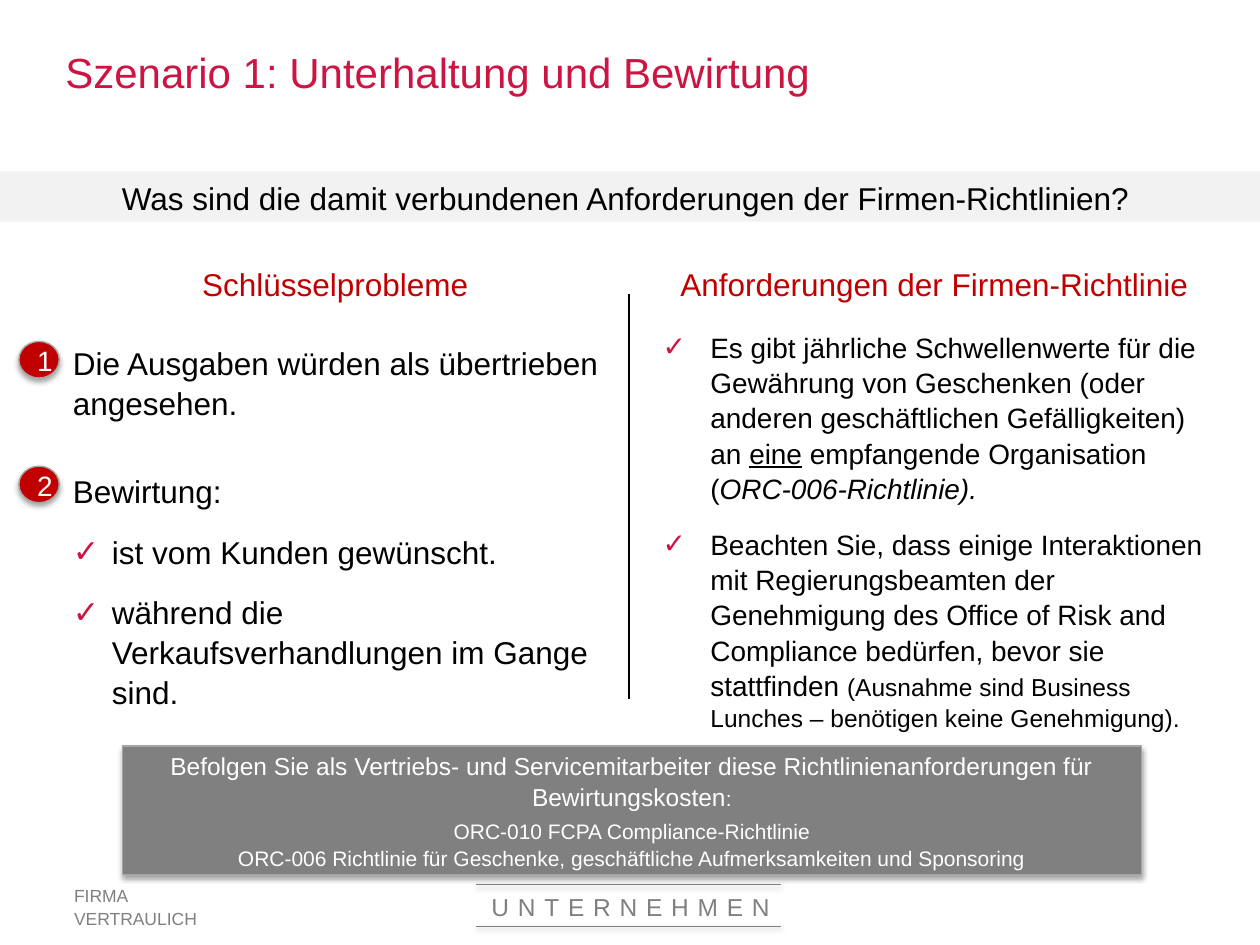
from lxml.etree import SubElement
from pptx import Presentation
from pptx.dml.color import RGBColor
from pptx.enum.shapes import MSO_CONNECTOR as CONNECTOR, MSO_SHAPE as SHAPE
from pptx.enum.text import MSO_ANCHOR as ANCHOR, PP_ALIGN as ALIGN
from pptx.oxml.ns import qn
from pptx.util import Inches, Pt

BLACK = RGBColor(0x00, 0x00, 0x00)
WHITE = RGBColor(0xFF, 0xFF, 0xFF)
GRAY = RGBColor(0x80, 0x80, 0x80)
BORDER = RGBColor(0xA5, 0xA5, 0xA5)
BAND = RGBColor(0xF2, 0xF2, 0xF2)
RED = RGBColor(0xC0, 0x00, 0x00)
CRIMSON = RGBColor(0xCC, 0x15, 0x43)

presentation = Presentation()
presentation.slide_width = Inches(10)
presentation.slide_height = Inches(7.5)
slide = presentation.slides.add_slide(presentation.slide_layouts[6])
shapes = slide.shapes
COLUMN = presentation.slide_width // 100
ROW = presentation.slide_height // 100


def write(shape, paragraphs, color, align=ALIGN.LEFT, anchor=ANCHOR.TOP):
    frame = shape.text_frame
    frame.word_wrap = True
    frame.vertical_anchor = anchor
    for index, (runs, before, after, indent) in enumerate(paragraphs):
        paragraph = frame.paragraphs[0] if index == 0 else frame.add_paragraph()
        if indent:
            properties = paragraph._p.get_or_add_pPr()
            properties.set("marL", str(Inches(indent)))
            properties.set("indent", str(-Inches(indent)))
            bullet_color = SubElement(properties, qn("a:buClr"))
            SubElement(bullet_color, qn("a:srgbClr"), val=str(CRIMSON))
            SubElement(properties, qn("a:buFont"), typeface="Arial")
            SubElement(properties, qn("a:buChar"), char="✓")
        paragraph.alignment = align
        paragraph.line_spacing = 1.05
        paragraph.space_before = Pt(before)
        paragraph.space_after = Pt(after)
        for text, size, style in runs:
            run = paragraph.add_run()
            run.text = text
            run.font.name = "Arial"
            run.font.size = Pt(size)
            run.font.color.rgb = color
            if style == "underline":
                run.font.underline = True
            if style == "italic":
                run.font.italic = True
            if style == "spaced":
                run._r.get_or_add_rPr().set("spc", "500")


def add_shadow(effects, distance, opacity):
    shadow = SubElement(effects, qn("a:outerShdw"), blurRad=str(Pt(3.1)),
                        dist=str(Pt(distance)), dir="5400000", rotWithShape="0")
    shade = SubElement(shadow, qn("a:srgbClr"), val=str(BLACK))
    SubElement(shade, qn("a:alpha"), val=str(opacity * 1000))


issues = [
    ([("Die Ausgaben würden als übertrieben angesehen.", 18, "")], 0, 21.5, 0),
    ([("Bewirtung:", 18, "")], 6, 6, 0),
    ([("ist vom Kunden gewünscht.", 18, "")], 6, 6, 0.31),
    ([("während die Verkaufsverhandlungen im Gange sind.", 18, "")], 6, 6, 0.31),
]
requirements = [
    ([("Es gibt jährliche Schwellenwerte für die Gewährung von Geschenken (oder anderen "
       "geschäftlichen Gefälligkeiten) an ", 16, ""),
      ("eine", 16, "underline"),
      (" empfangende Organisation (", 16, ""),
      ("ORC-006-Richtlinie).", 16, "italic")], 0, 6, 0.38),
    ([("Beachten Sie, dass einige Interaktionen mit Regierungsbeamten der Genehmigung des "
       "Office of Risk and Compliance bedürfen, bevor sie stattfinden ", 16, ""),
      ("(Ausnahme sind Business Lunches – benötigen keine Genehmigung).", 14, "")], 6, 6, 0.38),
]
policies = [
    ([("Befolgen Sie als Vertriebs- und Servicemitarbeiter diese Richtlinienanforderungen "
       "für Bewirtungskosten", 14, ""), (":", 12, "")], 0, 3.5, 0),
    ([("ORC-010 FCPA Compliance-Richtlinie", 12, "")], 0, 0, 0),
    ([("ORC-006 Richtlinie für Geschenke, geschäftliche Aufmerksamkeiten und Sponsoring",
       12, "")], 0, 0, 0),
]
confidential = [([("FIRMA VERTRAULICH", 10, "")], 0, 0, 0)]
audience = [([("UNTERNEHMEN", 14, "spaced")], 0, 0, 0)]
title = [([("Szenario 1: Unterhaltung und Bewirtung", 24, "")], 0, 0, 0)]
question = [([("Was sind die damit verbundenen Anforderungen der Firmen-Richtlinien? ", 18, "")],
             0, 0, 0)]
issues_heading = [([("Schlüsselprobleme", 18, "")], 0, 0, 0)]
requirements_heading = [([("Anforderungen der Firmen-Richtlinie", 18, "")], 0, 0, 0)]

for left, top, width, height, paragraphs, color, align, anchor in [
    (4.9, 94.13, 16.3, 3.6, confidential, GRAY, ALIGN.LEFT, ANCHOR.MIDDLE),
    (36.3, 93.6, 27.5, 5.6, audience, GRAY, ALIGN.CENTER, ANCHOR.TOP),
    (4.8, 35.6, 45.1, 34.53, issues, BLACK, ALIGN.LEFT, ANCHOR.TOP),
    (4.2, 1.07, 74.5, 12.67, title, CRIMSON, ALIGN.LEFT, ANCHOR.MIDDLE),
    (51.6, 34.13, 46.5, 42.4, requirements, BLACK, ALIGN.LEFT, ANCHOR.TOP),
    (4.7, 27.2, 43.8, 5.33, issues_heading, RED, ALIGN.CENTER, ANCHOR.TOP),
    (50.2, 27.2, 47.9, 5.33, requirements_heading, RED, ALIGN.CENTER, ANCHOR.TOP),
]:
    box = shapes.add_textbox(int(left * COLUMN), int(top * ROW),
                             int(width * COLUMN), int(height * ROW))
    write(box, paragraphs, color, align, anchor)

for kind, left, top, width, height, fill, border, paragraphs, color, anchor in [
    (SHAPE.RECTANGLE, 0, 18.13, 100, 5.33, BAND, None, question, BLACK, ANCHOR.TOP),
    (SHAPE.OVAL, 1.5, 36.13, 3.2, 3.87, RED, BORDER,
     [([("1", 16, "")], 0, 0, 0)], WHITE, ANCHOR.MIDDLE),
    (SHAPE.OVAL, 1.5, 49.33, 3.2, 3.87, RED, BORDER,
     [([("2", 16, "")], 0, 0, 0)], WHITE, ANCHOR.MIDDLE),
    (SHAPE.RECTANGLE, 9.7, 78.93, 80.9, 13.6, GRAY, BORDER, policies, WHITE, ANCHOR.MIDDLE),
]:
    shape = shapes.add_shape(kind, int(left * COLUMN), int(top * ROW),
                             int(width * COLUMN), int(height * ROW))
    shape.fill.solid()
    shape.fill.fore_color.rgb = fill
    shape.shadow.inherit = False
    if border:
        shape.line.color.rgb = border
        shape.line.width = Pt(0.75)
        add_shadow(shape._element.spPr.find(qn("a:effectLst")), 1.8, 35)
    else:
        shape.line.fill.background()
    write(shape, paragraphs, color, ALIGN.CENTER, anchor)

for x1, y1, x2, y2, color, weight, shaded in [
    (37.8, 93.6, 62, 93.6, GRAY, 0.5, True),
    (37.8, 98, 62, 98, GRAY, 0.5, True),
    (49.9, 31.07, 49.9, 74, BLACK, 1, False),
]:
    line = shapes.add_connector(CONNECTOR.STRAIGHT, int(x1 * COLUMN), int(y1 * ROW),
                                int(x2 * COLUMN), int(y2 * ROW))
    line.line.color.rgb = color
    line.line.width = Pt(weight)
    effects = SubElement(line._element.spPr, qn("a:effectLst"))
    if shaded:
        add_shadow(effects, 1.6, 38)

presentation.save("out.pptx")
